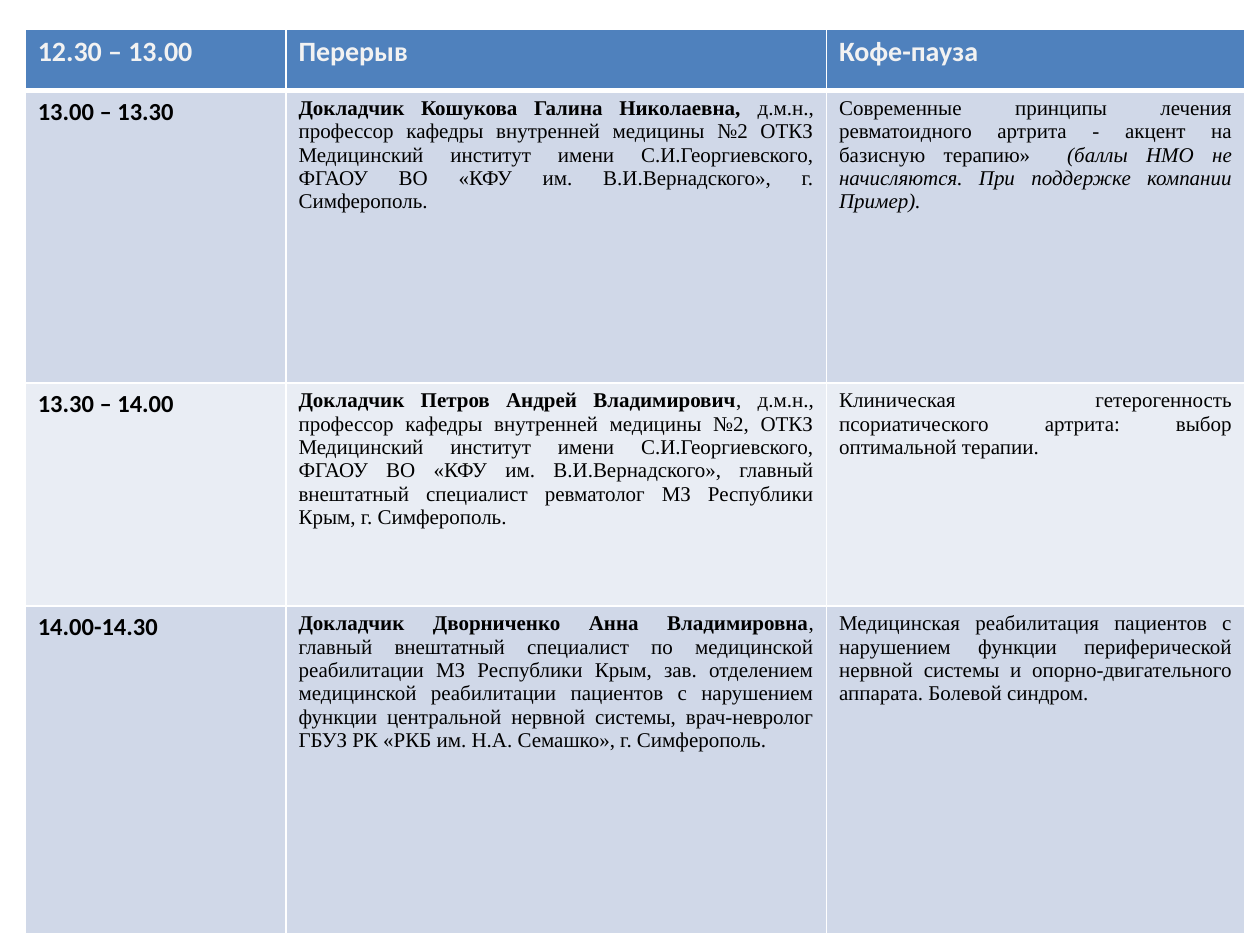
from dataclasses import dataclass

from lxml.etree import SubElement
from pptx import Presentation
from pptx.dml.color import RGBColor
from pptx.enum.text import PP_ALIGN as Align
from pptx.oxml.ns import qn
from pptx.util import Inches, Pt

COLORS = {
    "header": "4F81BD",
    "header_text": "F2F2F2",
    "odd": "D0D8E8",
    "even": "E9EDF4",
    "text": "000000",
    "border": "FFFFFF",
}
COLUMN_WIDTHS = (2.07, 4.29, 3.32)


@dataclass
class Span:
    text: str
    bold: bool = False
    italic: bool = False


@dataclass
class Session:
    height: float
    time: str
    speaker: list[Span]
    topic: list[Span]


HEADER_HEIGHT = 0.49
HEADINGS = ("12.30 – 13.00", "Перерыв", "Кофе-пауза")
SESSIONS = [
    Session(
        2.32,
        "13.00 – 13.30",
        [
            Span("Докладчик Кошукова Галина Николаевна, ", bold=True),
            Span("д.м.н., профессор кафедры внутренней медицины №2 ОТКЗ "
                 "Медицинский институт имени С.И.Георгиевского, ФГАОУ ВО "
                 "«КФУ им. В.И.Вернадского», г. Симферополь."),
        ],
        [
            Span("Современные принципы лечения ревматоидного артрита - "
                 "акцент на базисную терапию» "),
            Span(" (баллы НМО не начисляются. При поддержке компании "
                 "Пример).", italic=True),
        ],
    ),
    Session(
        1.77,
        "13.30 – 14.00",
        [
            Span("Докладчик Петров Андрей Владимирович", bold=True),
            Span(", д.м.н., профессор кафедры внутренней медицины №2, ОТКЗ "
                 "Медицинский институт имени С.И.Георгиевского, ФГАОУ ВО "
                 "«КФУ им. В.И.Вернадского», главный внештатный специалист "
                 "ревматолог МЗ Республики Крым, г. Симферополь."),
        ],
        [Span("Клиническая гетерогенность псориатического артрита: выбор "
              "оптимальной терапии.")],
    ),
    Session(
        2.6,
        "14.00-14.30",
        [
            Span("Докладчик Дворниченко Анна Владимировна", bold=True),
            Span(", главный внештатный специалист по медицинской "
                 "реабилитации МЗ Республики Крым, зав. отделением "
                 "медицинской реабилитации пациентов с нарушением функции "
                 "центральной нервной системы, врач-невролог ГБУЗ РК "
                 "«РКБ им. Н.А. Семашко», г. Симферополь."),
        ],
        [Span("Медицинская реабилитация пациентов с нарушением функции "
              "периферической нервной системы и опорно-двигательного "
              "аппарата. Болевой синдром.")],
    ),
]


def set_borders(cell, bottom: float = 1, top: float = 1) -> None:
    """Draw white lines on all four sides of a cell."""
    properties = cell._tc.get_or_add_tcPr()
    widths = {"lnL": 1, "lnR": 1, "lnT": top, "lnB": bottom}
    for position, (side, width) in enumerate(widths.items()):
        line = SubElement(properties, qn(f"a:{side}"), w=str(Pt(width)))
        fill = SubElement(line, qn("a:solidFill"))
        SubElement(fill, qn("a:srgbClr"), val=COLORS["border"])
        properties.insert(position, line)  # borders precede the fill


def write_cell(cell, spans: list[Span], *, fill: str, size: float,
               font: str = "Calibri", color: str = "text",
               align: Align = Align.LEFT) -> None:
    """Fill a cell with one formatted paragraph."""
    cell.fill.solid()
    cell.fill.fore_color.rgb = RGBColor.from_string(COLORS[fill])
    para = cell.text_frame.paragraphs[0]
    para.alignment = align
    for span in spans:
        run = para.add_run()
        run.text = span.text
        run.font.name = font
        run.font.size = Pt(size)
        run.font.bold = span.bold
        run.font.italic = span.italic
        run.font.color.rgb = RGBColor.from_string(COLORS[color])


def main() -> None:
    deck = Presentation()
    deck.slide_width, deck.slide_height = Inches(10), Inches(7.5)
    page = deck.slides.add_slide(deck.slide_layouts[6])

    # Schedule grid
    heights = [HEADER_HEIGHT] + [session.height for session in SESSIONS]
    schedule = page.shapes.add_table(
        len(heights), len(COLUMN_WIDTHS), Inches(0.2), Inches(0.23),
        Inches(sum(COLUMN_WIDTHS)), Inches(sum(heights))).table
    for column, width in zip(schedule.columns, COLUMN_WIDTHS):
        column.width = Inches(width)
    for row, height in zip(schedule.rows, heights):
        row.height = Inches(height)

    # Coffee break heading
    for cell, heading in zip(schedule.rows[0].cells, HEADINGS):
        write_cell(cell, [Span(heading, bold=True)], fill="header", size=16,
                   color="header_text")
        set_borders(cell, bottom=3)

    # Talks
    for number, session in enumerate(SESSIONS, start=1):
        fill = "odd" if number % 2 else "even"
        time, speaker, topic = schedule.rows[number].cells
        write_cell(time, [Span(session.time, bold=True)], fill=fill, size=14)
        for cell, spans in ((speaker, session.speaker), (topic, session.topic)):
            write_cell(cell, spans, fill=fill, size=12,
                       font="Times New Roman", align=Align.JUSTIFY)
        for cell in (time, speaker, topic):
            set_borders(cell, top=3 if number == 1 else 1)

    deck.save("out.pptx")


if __name__ == "__main__":
    main()
